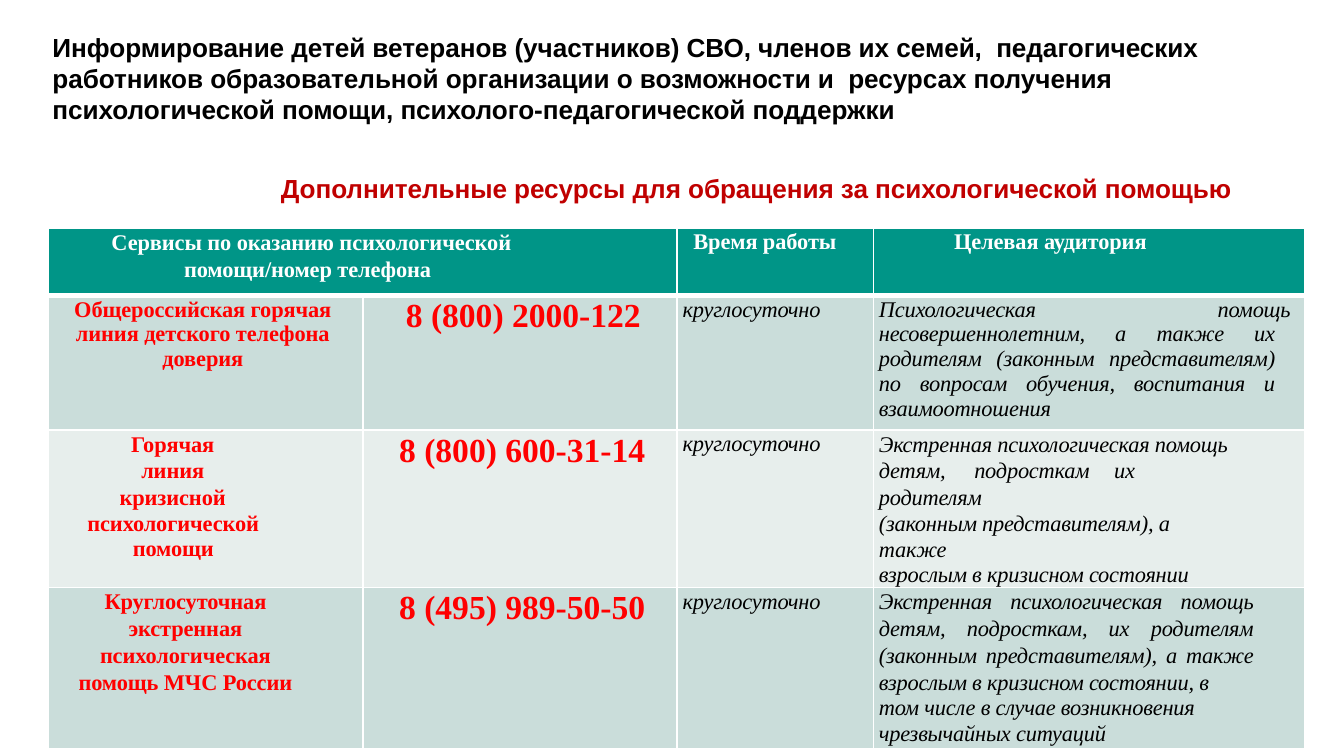
from lxml.etree import SubElement
from pptx import Presentation
from pptx.dml.color import RGBColor
from pptx.enum.text import MSO_ANCHOR as Anchor, MSO_AUTO_SIZE as AutoSize, PP_ALIGN as Align
from pptx.oxml import parse_xml
from pptx.oxml.ns import nsdecls, qn
from pptx.util import Inches, Pt

COLORS = {
    "black": "000000", "white": "FFFFFF", "heading": "C00000", "accent": "FF0000",
    "header": "009587", "band": "CADDDA", "light": "E7EEEC",
}
HEADING = {"name": "Arial", "size": Pt(14), "bold": True}
TABLE = {"name": "Times New Roman", "size": Pt(12), "bold": True}
STYLES = {
    "title": ("black", -7, HEADING),
    "subtitle": ("heading", -5, HEADING),
    "header": ("white", -5, TABLE),
    "service": ("accent", -5, TABLE),
    "phone": ("accent", 0, TABLE | {"size": Pt(18)}),
    "detail": ("black", -10, TABLE | {"bold": False, "italic": True}),
}
COLUMN_STYLES = ["service", "phone", "detail", "detail"]
COLUMN_WIDTHS = [2.34, 2.34, 1.46, 3.21]
ROW_HEIGHTS = [0.5, 1, 0.99, 1.2]
ROW_FILLS = ["header", "band", "light", "band"]


def item(text, left=0, right=0, first=0, line=None, before=0, align=Align.LEFT, tabs=()):
    margins = {"marL": left, "marR": right, "indent": first}
    layout = {"alignment": align, "space_before": Pt(before)}
    if line:
        layout["line_spacing"] = Pt(line)
    return text, margins, layout, tabs


def centered(text, **options):
    return item(text, align=Align.CENTER, **options)


def detail(text, **options):
    return item(text, left=0.04, **options)


def justified(text, **options):
    return detail(text, align=Align.JUSTIFY, **options)


HEADER = [
    [item("Сервисы по оказанию психологической помощи/номер телефона",
          left=1.01, right=0.6, first=-0.54, line=14.4, before=0.1)],
    None,
    [item("Время работы", left=0.12, line=14.1)],
    [item("Целевая аудитория", left=0.6, line=14.1)],
]
SERVICES = [
    [
        [centered("Общероссийская горячая", right=0.04, line=14.1),
         centered("линия детского телефона", right=0.04),
         centered("доверия", right=0.04)],
        [item("8 (800) 2000-122", left=0.32, line=21.1)],
        [detail("круглосуточно", line=14.1)],
        [justified("Психологическая\tпомощь", right=0.04, line=14.1, tabs=[2.52]),
         justified("несовершеннолетним, а также их родителям (законным представителям) "
                   "по вопросам обучения, воспитания и взаимоотношения", right=0.22)],
    ],
    [
        [centered("Горячая линия кризисной", left=0.37, right=0.86, line=14.4, before=0.1),
         centered("психологической", right=0.48, line=13.9),
         centered("помощи", right=0.48)],
        [item("8 (800) 600-31-14", left=0.27, line=21.1)],
        [detail("круглосуточно", line=14.1)],
        [detail("Экстренная психологическая помощь детям,\tподросткам\tих\tродителям",
                right=0.48, line=14.4, before=0.1, tabs=[0.71, 1.75, 2.07]),
         detail("(законным представителям), а также", line=13.9),
         detail("взрослым в кризисном состоянии")],
    ],
    [
        [centered("Круглосуточная экстренная психологическая помощь МЧС России",
                  left=0.2, right=0.5, line=14.4, before=0.2)],
        [item("8 (495) 989-50-50", left=0.27, line=21.1)],
        [detail("круглосуточно", line=14.2)],
        [justified("Экстренная психологическая помощь детям, подросткам, их родителям "
                   "(законным представителям), а также взрослым в кризисном состоянии, в",
                   right=0.38, line=14.4, before=0.2),
         justified("том числе в случае возникновения", right=0.35, line=13.9),
         justified("чрезвычайных ситуаций", right=0.35, line=13.7)],
    ],
]


def apply(target, values):
    for name, value in values.items():
        setattr(target, name, value)


def write_text(text_frame, items, style):
    color, spacing, font_values = STYLES[style]
    for index, (text, margins, layout, tabs) in enumerate(items):
        paragraph = text_frame.paragraphs[0] if index == 0 else text_frame.add_paragraph()
        apply(paragraph, layout)
        properties = paragraph._p.get_or_add_pPr()
        for name, value in margins.items():
            if value:
                properties.set(name, str(Inches(value)))
        if tabs:
            tab_list = SubElement(properties, qn("a:tabLst"))
            for position in tabs:
                SubElement(tab_list, qn("a:tab"), pos=str(Inches(position)), algn="l")
        run = paragraph.add_run()
        run.text = text
        apply(run.font, font_values)
        run.font.color.rgb = RGBColor.from_string(COLORS[color])
        run._r.get_or_add_rPr().set("spc", str(spacing))


def format_box(shape, box, items, style):
    apply(shape, dict(zip(("left", "top", "width", "height"), map(Inches, box))))
    apply(shape.text_frame, {
        "margin_left": 0, "margin_top": Inches(0.01), "margin_right": 0, "margin_bottom": 0,
        "word_wrap": True, "auto_size": AutoSize.NONE, "vertical_anchor": Anchor.TOP,
    })
    write_text(shape.text_frame, items, style)


def add_title(slide, box):
    text = ("Информирование детей ветеранов (участников) СВО, членов их семей,  педагогических "
            "работников образовательной организации о возможности и  ресурсах получения "
            "психологической помощи, психолого-педагогической поддержки")
    format_box(slide.shapes.title, box, [item(text, left=0.04, before=1.1)], "title")


def add_subtitle(slide, box):
    text = "Дополнительные ресурсы для обращения за психологической помощью"
    shape = slide.shapes.add_textbox(*map(Inches, box))
    format_box(shape, box, [item(text, left=0.01, before=1)], "subtitle")


def set_borders(cell, widths):
    properties = cell._tc.get_or_add_tcPr()
    for index, (side, width) in enumerate(zip("LRTB", widths)):
        properties.insert(index, parse_xml(
            f'<a:ln{side} {nsdecls("a")} w="{Pt(width)}"><a:solidFill>'
            f'<a:srgbClr val="{COLORS["white"]}"/></a:solidFill></a:ln{side}>'))


def add_services_table(slide, box):
    rows = [HEADER] + SERVICES
    table = slide.shapes.add_table(len(rows), len(HEADER), *map(Inches, box)).table
    for column, width in zip(table.columns, COLUMN_WIDTHS):
        column.width = Inches(width)
    for row, height in zip(table.rows, ROW_HEIGHTS):
        row.height = Inches(height)
    for row_index, contents in enumerate(rows):
        top, bottom = (3 if row_index == 1 else 1), (3 if row_index == 0 else 1)
        for column_index, items in enumerate(contents):
            cell = table.cell(row_index, column_index)
            apply(cell, dict.fromkeys(
                ("margin_left", "margin_top", "margin_right", "margin_bottom"), 0))
            cell.fill.solid()
            cell.fill.fore_color.rgb = RGBColor.from_string(COLORS[ROW_FILLS[row_index]])
            set_borders(cell, (1, 1, top, bottom))
            if items:
                style = "header" if row_index == 0 else COLUMN_STYLES[column_index]
                write_text(cell.text_frame, items, style)
    table.cell(0, 0).merge(table.cell(0, 1))


def main():
    presentation = Presentation()
    presentation.slide_width = Inches(10)
    presentation.slide_height = Inches(10 * 9 / 16)
    slide = presentation.slides.add_slide(presentation.slide_layouts[5])
    add_title(slide, (0.35, 0.22, 8.82, 0.96))
    add_subtitle(slide, (2.08, 1.27, 7.7, 0.25))
    add_services_table(slide, (0.36, 1.7, sum(COLUMN_WIDTHS), sum(ROW_HEIGHTS)))
    presentation.save("out.pptx")


if __name__ == "__main__":
    main()
